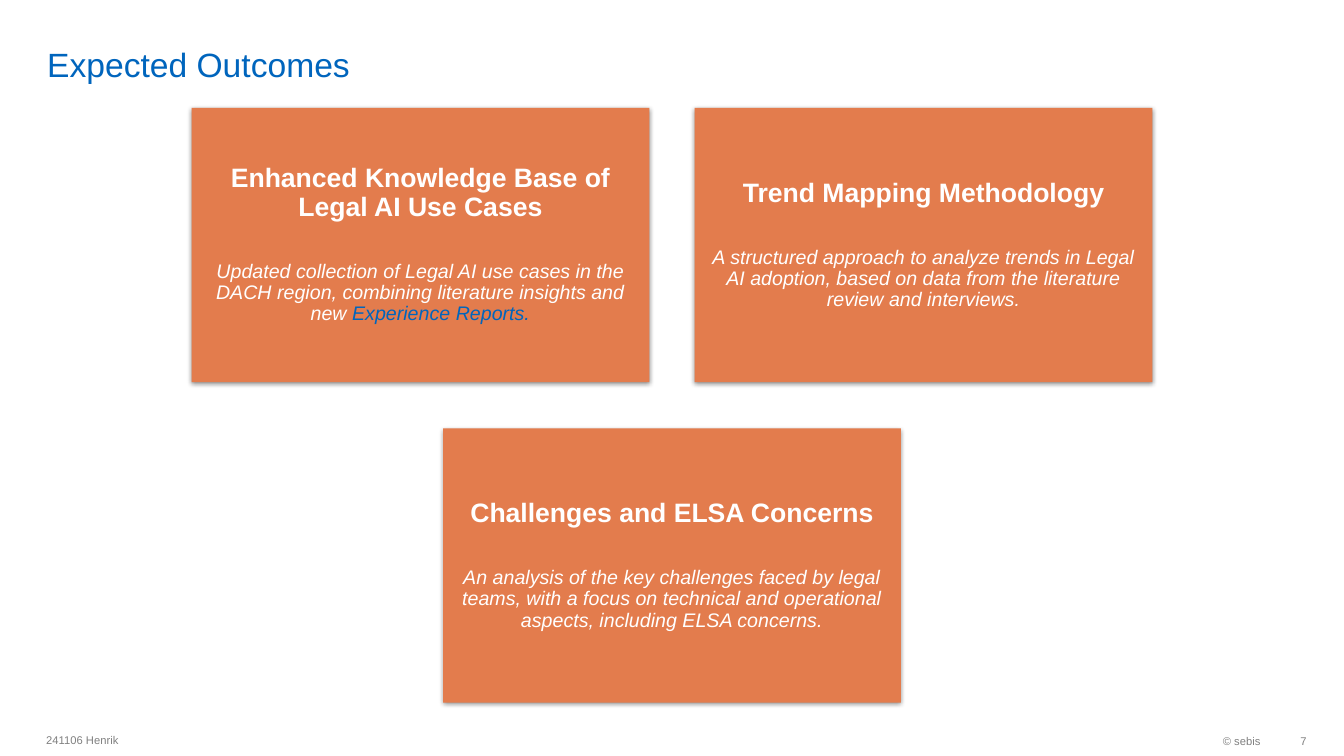
from lxml import etree
from pptx import Presentation
from pptx.dml.color import RGBColor
from pptx.enum.shapes import MSO_SHAPE
from pptx.enum.text import MSO_ANCHOR, PP_ALIGN
from pptx.oxml.ns import qn
from pptx.util import Inches, Pt

BLUE, ORANGE, WHITE, GRAY = "0065BD", "E37C4D", "FFFFFF", "808080"
CARD_W, CARD_H = 4.54, 2.72
LEFT, TOP = 1.9, 1.07
STEP_X, STEP_Y = 4.99, 3.18

# Column, row, heading, description, highlighted ending
OUTCOMES = [
    (0, 0, "Enhanced Knowledge Base of Legal AI Use Cases",
     "Updated collection of Legal AI use cases in the DACH region, "
     "combining literature insights and new ", "Experience Reports."),
    (1, 0, "Trend Mapping Methodology",
     "A structured approach to analyze trends in Legal AI adoption, "
     "based on data from the literature review and interviews.", ""),
    (0.5, 1, "Challenges and ELSA Concerns",
     "An analysis of the key challenges faced by legal teams, with a focus on "
     "technical and operational aspects, including ELSA concerns.", ""),
]


def rgb(color):
    return RGBColor.from_string(color)


def add_run(p, text, size, color, bold=False, italic=False):
    r = p.add_run()
    r.text = text
    r.font.name = "Arial"
    r.font.size = Pt(size)
    r.font.color.rgb = rgb(color)
    r.font.bold = bold
    r.font.italic = italic


def add_label(slide, text, box, size, color, anchor=MSO_ANCHOR.MIDDLE,
              align=PP_ALIGN.LEFT, right=0.1):
    tf = slide.shapes.add_textbox(*map(Inches, box)).text_frame
    tf.word_wrap = True
    tf.vertical_anchor = anchor
    tf.margin_top = tf.margin_bottom = 0
    tf.margin_right = Inches(right)
    p = tf.paragraphs[0]
    p.alignment = align
    add_run(p, text, size, color)


def add_shadow(sp):
    """Give the shape a soft shadow that falls straight down."""
    sp.shadow.inherit = False
    effects = sp.element.spPr.find(qn("a:effectLst"))
    shadow = etree.SubElement(
        effects, qn("a:outerShdw"), blurRad=str(Pt(3.5)), dist=str(Pt(1.1)),
        dir="5400000", rotWithShape="0")
    black = etree.SubElement(shadow, qn("a:srgbClr"), val="000000")
    etree.SubElement(black, qn("a:alpha"), val="45000")


def add_card(slide, column, row, heading, description, highlight):
    sp = slide.shapes.add_shape(
        MSO_SHAPE.RECTANGLE, Inches(LEFT + column * STEP_X),
        Inches(TOP + row * STEP_Y), Inches(CARD_W), Inches(CARD_H))
    sp.fill.solid()
    sp.fill.fore_color.rgb = rgb(ORANGE)
    sp.line.fill.background()
    add_shadow(sp)

    tf = sp.text_frame
    tf.word_wrap = True
    tf.vertical_anchor = MSO_ANCHOR.MIDDLE
    tf.margin_left = tf.margin_right = Inches(0.08)
    tf.margin_top = tf.margin_bottom = Inches(0.08)
    title, body = tf.paragraphs[0], tf.add_paragraph()
    for p in (title, body):
        p.alignment = PP_ALIGN.CENTER
        p.line_spacing = 0.9
    title.space_after = Pt(28)
    add_run(title, heading, 19, WHITE, bold=True)
    add_run(body, description, 14, WHITE, italic=True)
    if highlight:
        add_run(body, highlight, 14, BLUE, italic=True)


def main():
    prs = Presentation()
    prs.slide_width, prs.slide_height = Inches(13.33), Inches(7.5)
    slide = prs.slides.add_slide(prs.slide_layouts[6])

    add_label(slide, "Expected Outcomes", (0.37, 0.05, 11.58, 0.79), 24, BLUE,
              anchor=MSO_ANCHOR.BOTTOM)
    for outcome in OUTCOMES:
        add_card(slide, *outcome)

    add_label(slide, "241106 Henrik", (0.36, 7.18, 6.3, 0.32), 8, GRAY)
    add_label(slide, "© sebis", (10.26, 7.19, 2.34, 0.32), 8, GRAY,
              align=PP_ALIGN.RIGHT)
    add_label(slide, "7", (12.6, 7.19, 0.36, 0.32), 8, GRAY,
              align=PP_ALIGN.RIGHT, right=0)
    prs.save("out.pptx")


if __name__ == "__main__":
    main()
